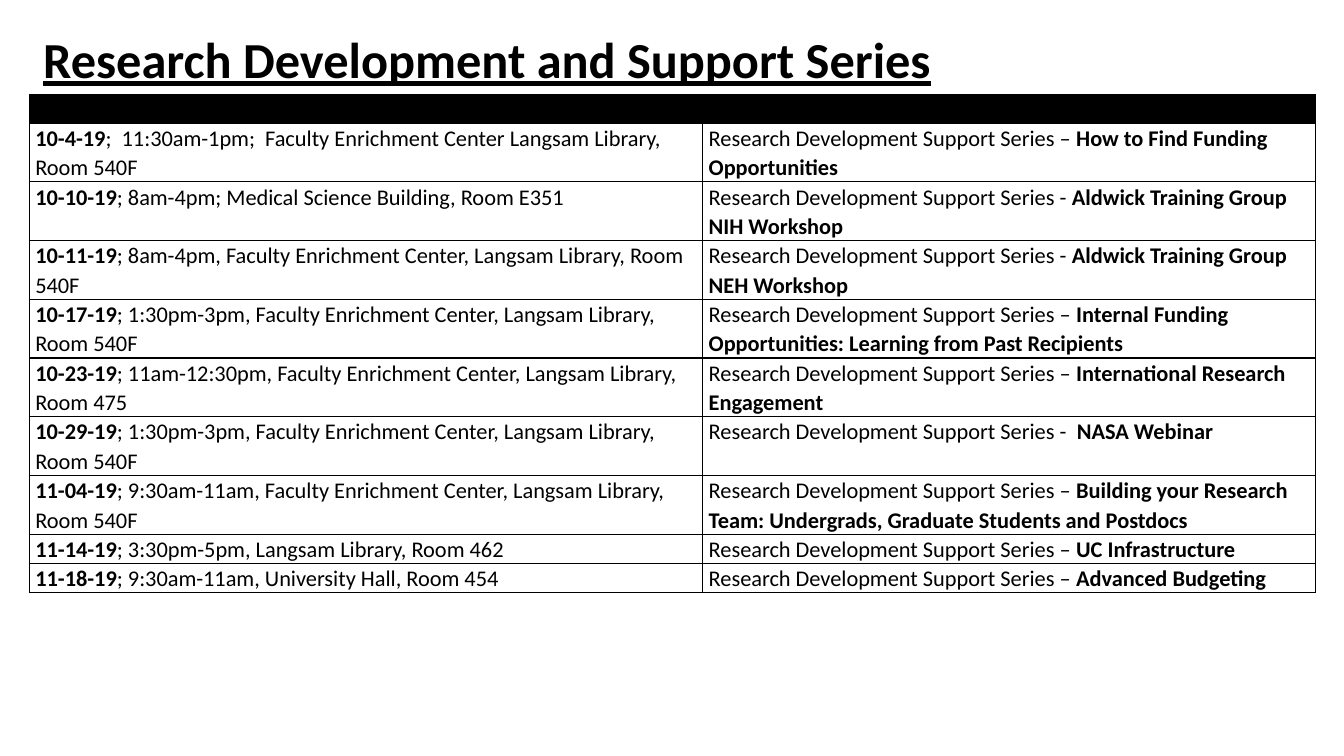
from lxml import etree
from pptx import Presentation
from pptx.dml.color import RGBColor
from pptx.enum.text import MSO_ANCHOR
from pptx.oxml.ns import qn
from pptx.util import Cm, Pt

MIDDLE, TOP = MSO_ANCHOR.MIDDLE, MSO_ANCHOR.TOP
COLORS = {"ink": "000000", "paper": "FFFFFF"}
FONT = "Calibri"
TITLE = "Research Development and Support Series"
SERIES = "Research Development Support Series"

# date, time and place, dash after the series name, topic, text lines, anchor
EVENTS = [
    ("10-4-19", ";  11:30am-1pm;  Faculty Enrichment Center Langsam Library, Room 540F",
     " – ", "How to Find Funding Opportunities", 2, MIDDLE),
    ("10-10-19", "; 8am-4pm; Medical Science Building, Room E351",
     " - ", "Aldwick Training Group NIH Workshop", 2, TOP),
    ("10-11-19", "; 8am-4pm, Faculty Enrichment Center, Langsam Library, Room 540F",
     " - ", "Aldwick Training Group NEH Workshop", 2, MIDDLE),
    ("10-17-19", "; 1:30pm-3pm, Faculty Enrichment Center, Langsam Library, Room 540F",
     " – ", "Internal Funding Opportunities: Learning from Past Recipients", 2, TOP),
    ("10-23-19", "; 11am-12:30pm, Faculty Enrichment Center, Langsam Library, Room 475",
     " – ", "International Research Engagement", 2, MIDDLE),
    ("10-29-19", "; 1:30pm-3pm, Faculty Enrichment Center, Langsam Library, Room 540F",
     " -  ", "NASA Webinar", 2, TOP),
    ("11-04-19", "; 9:30am-11am, Faculty Enrichment Center, Langsam Library, Room 540F",
     " – ", "Building your Research Team: Undergrads, Graduate Students and Postdocs",
     2, MIDDLE),
    ("11-14-19", "; 3:30pm-5pm, Langsam Library, Room 462",
     " – ", "UC Infrastructure", 1, MIDDLE),
    ("11-18-19", "; 9:30am-11am, University Hall, Room 454",
     " – ", "Advanced Budgeting", 1, MIDDLE),
]
COLUMN_WIDTHS = [Cm(16.97), Cm(15.44)]
HEADER_HEIGHT = Cm(0.71)
LINE_HEIGHT = Cm(0.74)


def add_run(paragraph, text, size, bold, underline=False):
    run = paragraph.add_run()
    run.text = text
    run.font.name = FONT
    run.font.size = Pt(size)
    run.font.bold = bold
    run.font.underline = underline
    run.font.color.rgb = RGBColor.from_string(COLORS["ink"])


def style_cell(cell, fill, anchor):
    cell.margin_left = cell.margin_right = Cm(0.15)
    cell.margin_top = cell.margin_bottom = 0
    cell.vertical_anchor = anchor
    properties = cell._tc.get_or_add_tcPr()
    for side in ("a:lnL", "a:lnR", "a:lnT", "a:lnB"):
        line = etree.SubElement(properties, qn(side), w=str(Pt(1)))
        solid = etree.SubElement(line, qn("a:solidFill"))
        etree.SubElement(solid, qn("a:srgbClr"), val=COLORS["ink"])
    cell.fill.solid()
    cell.fill.fore_color.rgb = RGBColor.from_string(fill)


def fill_cell(cell, runs, anchor):
    style_cell(cell, COLORS["paper"], anchor)
    paragraph = cell.text_frame.paragraphs[0]
    paragraph.line_spacing = 1.07
    for text, bold in runs:
        add_run(paragraph, text, 16, bold)


def add_title(slide):
    box = slide.shapes.add_textbox(Cm(0.84), Cm(0.43), Cm(31.27), Cm(2.29))
    frame = box.text_frame
    frame.word_wrap = True
    frame.vertical_anchor = MIDDLE
    paragraph = frame.paragraphs[0]
    paragraph.line_spacing = 0.9
    add_run(paragraph, TITLE, 36, True, underline=True)


def add_schedule(slide):
    heights = [HEADER_HEIGHT] + [LINE_HEIGHT * event[4] for event in EVENTS]
    table = slide.shapes.add_table(
        len(heights), len(COLUMN_WIDTHS), Cm(0.74), Cm(2.39),
        sum(COLUMN_WIDTHS), sum(heights)).table
    for column, width in zip(table.columns, COLUMN_WIDTHS):
        column.width = width
    for row, height in zip(table.rows, heights):
        row.height = height

    for cell in table.rows[0].cells:
        style_cell(cell, COLORS["ink"], MIDDLE)
        # An empty cell takes its line height from the end-of-paragraph size.
        paragraph = cell.text_frame.paragraphs[0]
        etree.SubElement(paragraph._p, qn("a:endParaRPr"), sz="1200")

    for row, (date, place, dash, topic, _, anchor) in enumerate(EVENTS, 1):
        fill_cell(table.cell(row, 0), [(date, True), (place, False)], anchor)
        fill_cell(table.cell(row, 1), [(SERIES + dash, False), (topic, True)], anchor)


def main():
    presentation = Presentation()
    presentation.slide_width = Cm(33.87)
    presentation.slide_height = Cm(19.05)
    slide = presentation.slides.add_slide(presentation.slide_layouts[6])
    add_title(slide)
    add_schedule(slide)
    presentation.save("out.pptx")


if __name__ == "__main__":
    main()
